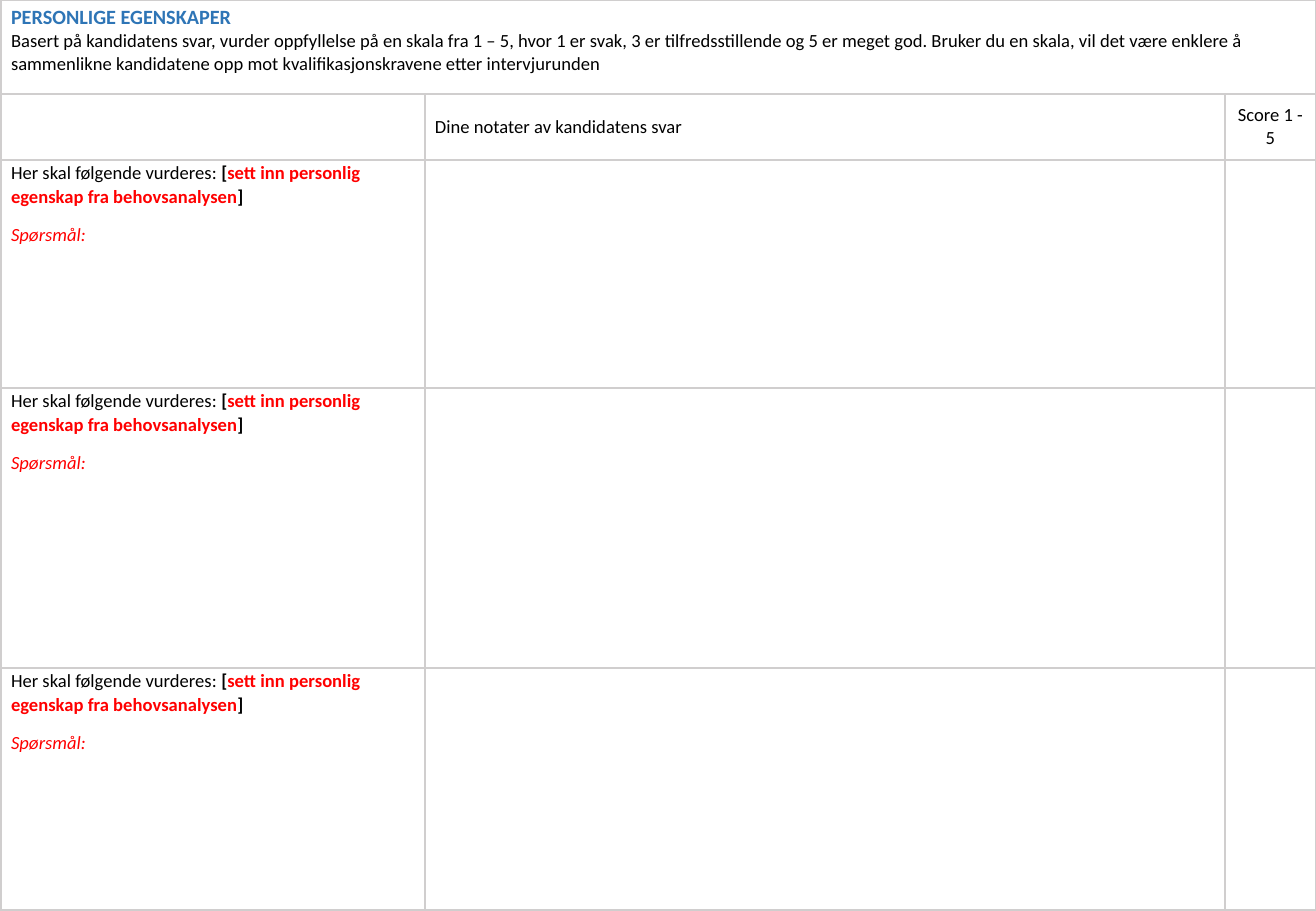
"""Build an interview form for scoring personal qualities."""
import pptx
import pptx.dml.color
import pptx.enum.text
import pptx.oxml
import pptx.oxml.ns
import pptx.util

PX = 7526
FONT = "Calibri"
BLACK, RED, BLUE, GREY, WHITE = "000000", "FF0000", "2E75B6", "D0CECE", "FFFFFF"
COLS = [424, 800, 91]
ROWS = [94, 66, 228, 280, 242]


def color(code):
    return pptx.dml.color.RGBColor.from_string(code)


def write(para, text, size=11, code=BLACK, bold=False, italic=False):
    run = para.add_run()
    run.text = text
    font = run.font
    font.name, font.size = FONT, pptx.util.Pt(size)
    font.bold, font.italic = bold, italic
    font.color.rgb = color(code)


deck = pptx.Presentation()
deck.slide_width, deck.slide_height = 1316 * PX, 911 * PX
slide = deck.slides.add_slide(deck.slide_layouts[6])

form = slide.shapes.add_table(
    len(ROWS), len(COLS), 1 * PX, 0, sum(COLS) * PX, sum(ROWS) * PX
).table
form.first_row = form.horz_banding = False
for col, width in zip(form.columns, COLS):
    col.width = width * PX
for row, height in zip(form.rows, ROWS):
    row.height = height * PX

for r, row in enumerate(form.rows):
    for cell in row.cells:
        cell.margin_left = cell.margin_right = 10 * PX
        cell.margin_top = cell.margin_bottom = (5 if r < 2 else 0) * PX
        props = cell._tc.get_or_add_tcPr()
        for side in "LRTB":
            props.append(pptx.oxml.parse_xml(
                f'<a:ln{side} {pptx.oxml.ns.nsdecls("a")} w="12700"><a:solidFill>'
                f'<a:srgbClr val="{GREY}"/></a:solidFill></a:ln{side}>'
            ))
        cell.fill.solid()
        cell.fill.fore_color.rgb = color(WHITE)

form.cell(0, 0).merge(form.cell(0, 2))
intro = form.cell(0, 0).text_frame
write(intro.paragraphs[0], "PERSONLIGE EGENSKAPER", 12, BLUE, True)
write(
    intro.add_paragraph(),
    "Basert på kandidatens svar, vurder oppfyllelse på en skala fra 1 – 5, "
    "hvor 1 er svak, 3 er tilfredsstillende og 5 er meget god. "
    "Bruker du en skala, vil det være enklere å sammenlikne kandidatene "
    "opp mot kvalifikasjonskravene etter intervjurunden",
)

for c, label in [(1, "Dine notater av kandidatens svar"), (2, "Score 1 - 5")]:
    head = form.cell(1, c)
    head.vertical_anchor = pptx.enum.text.MSO_ANCHOR.MIDDLE
    write(head.text_frame.paragraphs[0], label)
form.cell(1, 2).text_frame.paragraphs[0].alignment = pptx.enum.text.PP_ALIGN.CENTER

for r in range(2, len(ROWS)):
    frame = form.cell(r, 0).text_frame
    trait, query = frame.paragraphs[0], frame.add_paragraph()
    for para in (trait, query):
        para.line_spacing = 1.07
        para.space_after = pptx.util.Pt(8)
    write(trait, "Her skal følgende vurderes: ")
    write(trait, "[", bold=True)
    write(trait, "sett inn personlig egenskap fra behovsanalysen", code=RED, bold=True)
    write(trait, "]", bold=True)
    write(query, "Spørsmål:", code=RED, italic=True)

deck.save("out.pptx")
